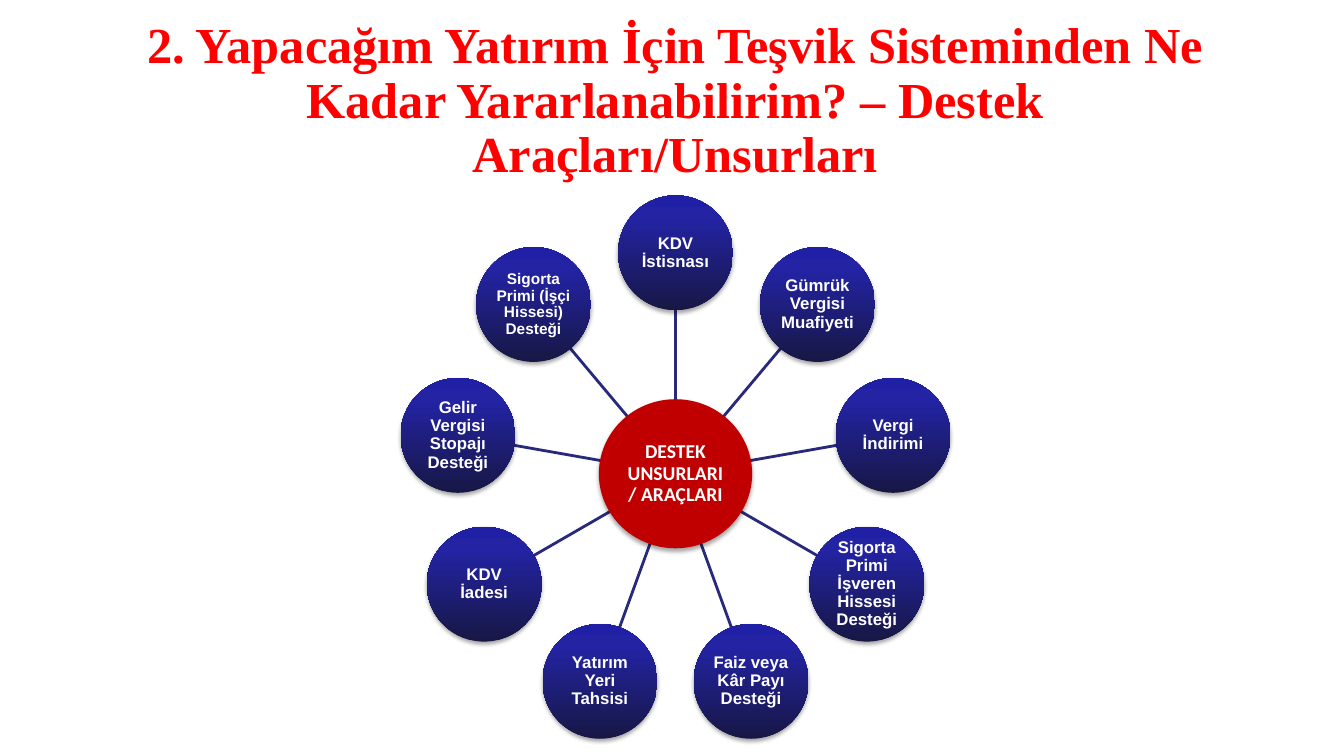
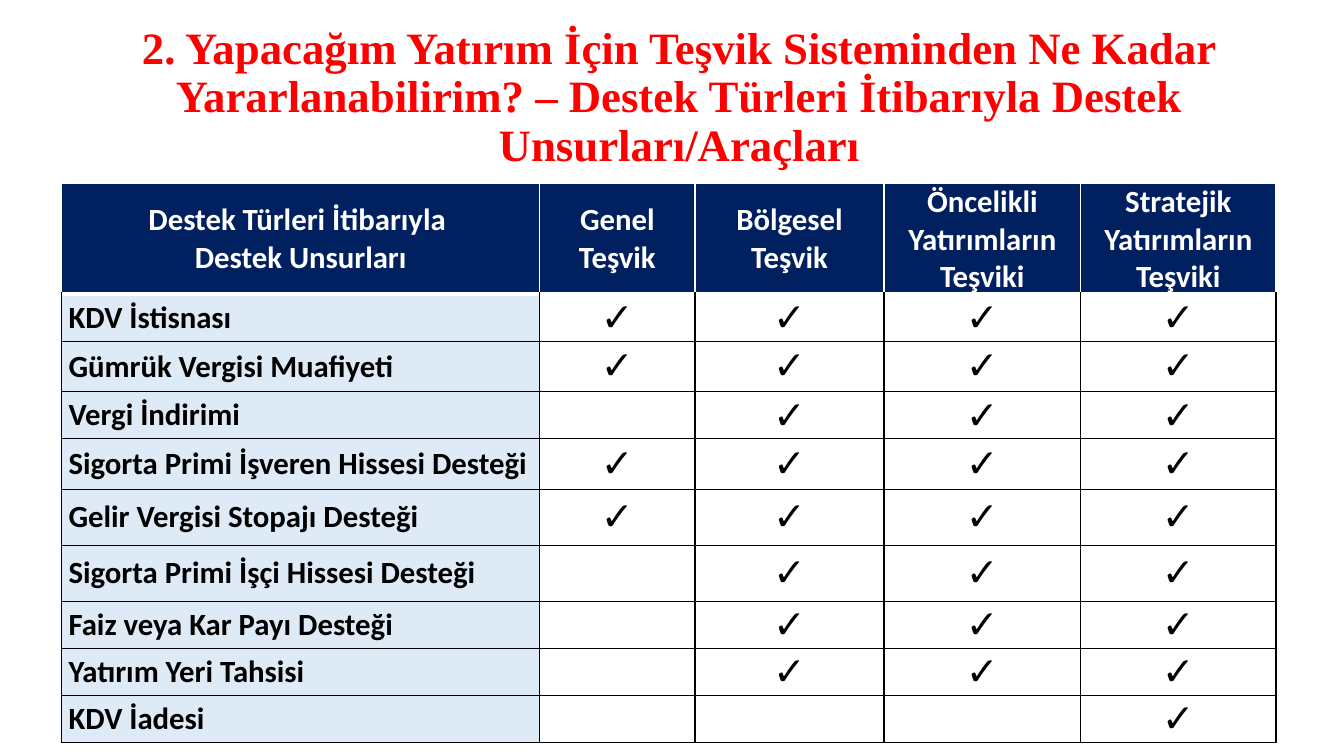
import math

import pptx
import pptx.dml.color
import pptx.enum.shapes
import pptx.enum.text
import pptx.oxml
import pptx.oxml.ns
import pptx.util

Pt = pptx.util.Pt
ALIGN = pptx.enum.text.PP_ALIGN
MIDDLE = pptx.enum.text.MSO_ANCHOR.MIDDLE
OVAL = pptx.enum.shapes.MSO_SHAPE.OVAL
STRAIGHT = pptx.enum.shapes.MSO_CONNECTOR.STRAIGHT

RED, CRIMSON, NAVY, SPOKE = "FF0000", "C00000", "002060", "29297B"
WHITE, BLACK, PALE = "FFFFFF", "000000", "DEEBF7"
FADE = [(0, "171745"), (80, "2323A3"), (100, "2020A6")]
SERIF, SANS, BODY = "Times New Roman", "Arial", "Calibri"
CHECK = "✓"

HEAD = "2. Yapacağım Yatırım İçin Teşvik Sisteminden Ne Kadar Yararlanabilirim? – "
NODES = [
    ("KDV İstisnası", 12),
    ("Gümrük Vergisi Muafiyeti", 12),
    ("Vergi İndirimi", 12),
    ("Sigorta Primi İşveren Hissesi Desteği", 12),
    ("Faiz veya Kâr Payı Desteği", 12),
    ("Yatırım Yeri Tahsisi", 12),
    ("KDV İadesi", 12),
    ("Gelir Vergisi Stopajı Desteği", 12),
    ("Sigorta Primi (İşçi Hissesi) Desteği", 11),
]
COLS = [
    (["Destek Türleri İtibarıyla ", "Destek Unsurları"], 341.5),
    (["Genel Teşvik"], 111),
    (["Bölgesel Teşvik"], 135),
    (["Öncelikli Yatırımların Teşviki"], 140.5),
    (["Stratejik Yatırımların Teşviki"], 139.5),
]
ROWS = [
    ("KDV İstisnası", 4, 33),
    ("Gümrük Vergisi Muafiyeti", 4, 36),
    ("Vergi İndirimi", 3, 33),
    ("Sigorta Primi İşveren Hissesi Desteği", 4, 36),
    ("Gelir Vergisi Stopajı Desteği", 4, 40),
    ("Sigorta Primi İşçi Hissesi Desteği", 3, 40),
    ("Faiz veya Kar Payı Desteği", 3, 33),
    ("Yatırım Yeri Tahsisi", 3, 33),
    ("KDV İadesi", 1, 33),
]
TOP_ROW = 78.5


def tint(code):
    return pptx.dml.color.RGBColor.from_string(code)


def xml(text):
    space = pptx.oxml.ns.nsdecls("a")
    return pptx.oxml.parse_xml(text.replace(">", f" {space}>", 1))


def write(frame, lines, size, face, color, bold=True, align=ALIGN.CENTER, pitch=None):
    for i, line in enumerate(lines):
        para = frame.paragraphs[0] if i == 0 else frame.add_paragraph()
        para.alignment = align
        if pitch:
            para.line_spacing = pitch
        run = para.add_run()
        run.text = line
        run.font.size = Pt(size)
        run.font.name = face
        run.font.bold = bold
        run.font.color.rgb = tint(color)


def title(slide, box, tail, size):
    frame = slide.shapes.add_textbox(*map(Pt, box)).text_frame
    frame.word_wrap = True
    frame.vertical_anchor = MIDDLE
    write(frame, [HEAD + tail], size, SERIF, RED, pitch=0.9)


def disc(slide, mid, wide, high, label, size, face):
    x, y = mid
    shape = slide.shapes.add_shape(
        OVAL, Pt(x - wide / 2), Pt(y - high / 2), Pt(wide), Pt(high))
    shape.line.fill.background()
    shape.fill.solid()
    shape.fill.fore_color.rgb = tint(CRIMSON)
    shape._element.spPr.append(xml(
        f'<a:effectLst><a:outerShdw blurRad="{Pt(3.1)}" dist="{Pt(1.8)}" dir="5400000" '
        f'rotWithShape="0"><a:srgbClr val="{BLACK}"><a:alpha val="35000"/>'
        '</a:srgbClr></a:outerShdw></a:effectLst>'))
    frame = shape.text_frame
    frame.word_wrap = True
    frame.vertical_anchor = MIDDLE
    frame.margin_left = frame.margin_right = Pt(0.7)
    frame.margin_top = frame.margin_bottom = Pt(0.7)
    write(frame, [label], size, face, WHITE, pitch=0.9)
    return shape


def shade(shape):
    stops = "".join(
        f'<a:gs pos="{pos * 1000}"><a:srgbClr val="{code}"/></a:gs>' for pos, code in FADE)
    props = shape._element.spPr
    props.replace(
        props.find(pptx.oxml.ns.qn("a:solidFill")),
        xml(f'<a:gradFill><a:gsLst>{stops}</a:gsLst><a:lin ang="16200000" scaled="0"/></a:gradFill>'))


def spoke(slide, start, end):
    line = slide.shapes.add_connector(STRAIGHT, *map(Pt, start + end))
    line.line.width = Pt(2)
    line.line.color.rgb = tint(SPOKE)
    line._element.spPr.append(xml("<a:effectLst></a:effectLst>"))


def wheel(slide, box):
    left, top, wide, high = box
    node = 82
    reach = 157.8
    hub = (left + wide / 2, top + node / 2 + reach)

    def point(angle, far):
        return (hub[0] + far * math.sin(angle), hub[1] - far * math.cos(angle))

    angles = [math.tau * i / len(NODES) for i in range(len(NODES))]
    for angle in angles:
        spoke(slide, point(angle, 53), point(angle, reach - node / 2 + 1))
    disc(slide, hub, 109.5, 106.5, "DESTEK UNSURLARI / ARAÇLARI", 14, BODY)
    for angle, (label, size) in zip(angles, NODES):
        shade(disc(slide, point(angle, reach), node, node, label, size, SANS))


def edge(cell, sides):
    props = cell._tc.get_or_add_tcPr()
    for side in "LRTB":
        color, width = sides[side]
        props.append(xml(
            f'<a:ln{side} w="{Pt(width)}"><a:solidFill><a:srgbClr val="{color}"/>'
            f'</a:solidFill></a:ln{side}>'))


def style(cell, fill, sides):
    edge(cell, sides)
    cell.fill.solid()
    cell.fill.fore_color.rgb = tint(fill)
    cell.vertical_anchor = MIDDLE
    cell.margin_left = cell.margin_right = Pt(5)
    cell.margin_top = cell.margin_bottom = 0


def grid(slide, box):
    table = slide.shapes.add_table(len(ROWS) + 1, len(COLS), *map(Pt, box)).table
    light = dict.fromkeys("LRTB", (WHITE, 1)) | {"B": (WHITE, 3)}
    dark = dict.fromkeys("LRTB", (BLACK, 1))
    table.rows[0].height = Pt(TOP_ROW)
    for c, (lines, wide) in enumerate(COLS):
        table.columns[c].width = Pt(wide)
        cell = table.cell(0, c)
        style(cell, NAVY, light)
        write(cell.text_frame, lines, 22, BODY, WHITE)
    for r, (label, count, high) in enumerate(ROWS, 1):
        table.rows[r].height = Pt(high)
        sides = dark | {"T": (WHITE, 1)} if r == 1 else dark
        for c in range(len(COLS)):
            cell = table.cell(r, c)
            style(cell, WHITE if c else PALE, sides)
            if c == 0:
                write(cell.text_frame, [label], 22, BODY, BLACK, align=ALIGN.LEFT)
            elif c >= len(COLS) - count and not (count == 3 and c == 1):
                write(cell.text_frame, [CHECK], 28, BODY, BLACK, bold=False)


def main():
    deck = pptx.Presentation()
    deck.slide_width, deck.slide_height = Pt(960), Pt(540)
    blank = deck.slide_layouts[6]

    first = deck.slides.add_slide(blank)
    title(first, (68.4, 21, 828, 103.5), "Destek Araçları/Unsurları", 36)
    wheel(first, (287, 139.6, 391, 387))

    second = deck.slides.add_slide(blank)
    title(second, (71.3, 34.6, 828, 71.3),
          "Destek Türleri İtibarıyla Destek Unsurları/Araçları", 32)
    grid(second, (44, 131, 867.5, 399.5))

    deck.save("out.pptx")


if __name__ == "__main__":
    main()
